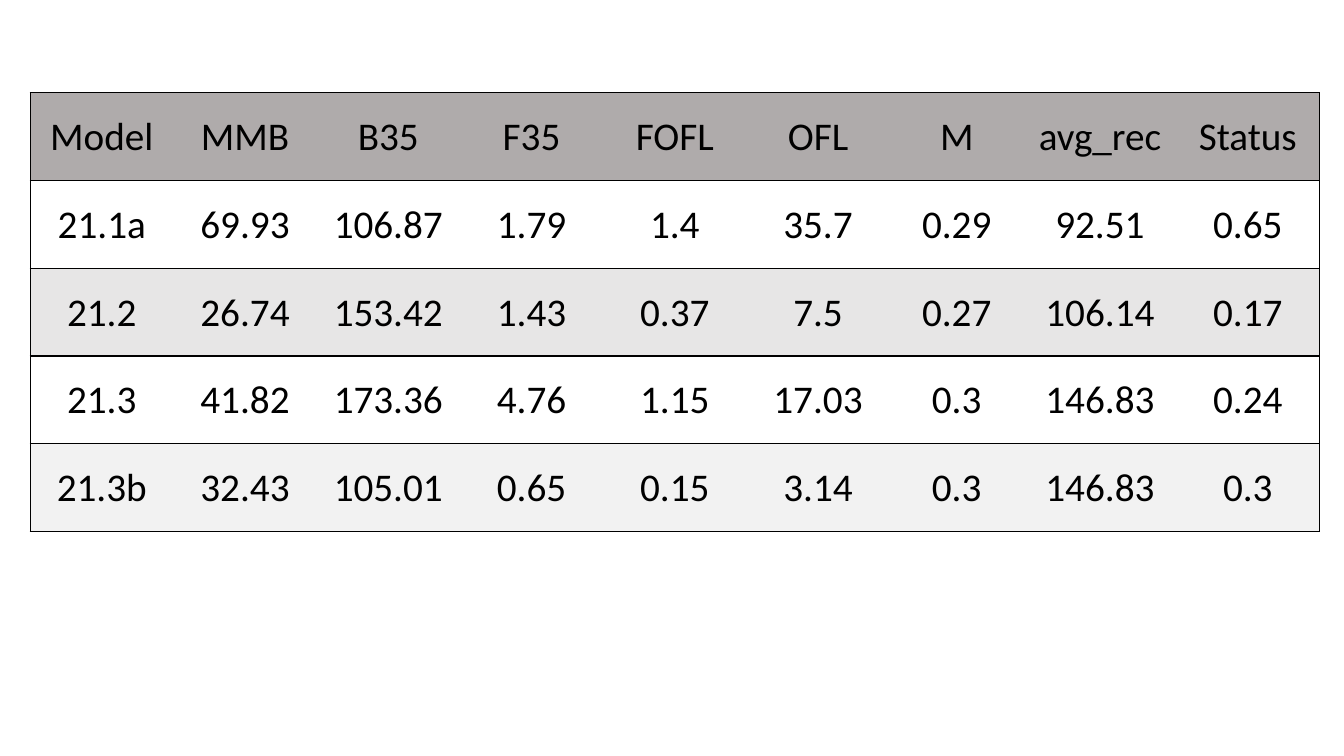
from typing import NamedTuple

from lxml import etree
from pptx import Presentation
from pptx import util as u
from pptx.dml import color
from pptx.enum import text
from pptx.oxml import ns


class Row(NamedTuple):
    fill: str
    values: tuple[str, ...]


ROWS = (
    Row("AFABAB", ("Model", "MMB", "B35", "F35", "FOFL", "OFL", "M", "avg_rec", "Status")),
    Row("FFFFFF", ("21.1a", "69.93", "106.87", "1.79", "1.4", "35.7", "0.29", "92.51", "0.65")),
    Row("E7E6E6", ("21.2", "26.74", "153.42", "1.43", "0.37", "7.5", "0.27", "106.14", "0.17")),
    Row("FFFFFF", ("21.3", "41.82", "173.36", "4.76", "1.15", "17.03", "0.3", "146.83", "0.24")),
    Row("F2F2F2", ("21.3b", "32.43", "105.01", "0.65", "0.15", "3.14", "0.3", "146.83", "0.3")),
)
COLUMN_WIDTH = 3.61
SPECIAL_WIDTHS = {"M": 3.38, "avg_rec": 3.84}
ROW_HEIGHT = 2.21
INK = "000000"


def rgb(value: str) -> color.RGBColor:
    return color.RGBColor.from_string(value)


def set_borders(cell, ruled: str) -> None:
    """Rule the sides named by L, R, T and B in black and clear the others."""
    properties = cell._tc.get_or_add_tcPr()
    for side in "LRTB":
        line = etree.SubElement(properties, ns.qn(f"a:ln{side}"), w=str(u.Pt(1)))
        if side in ruled:
            fill = etree.SubElement(line, ns.qn("a:solidFill"))
            etree.SubElement(fill, ns.qn("a:srgbClr"), val=INK)
        else:
            etree.SubElement(line, ns.qn("a:noFill"))


def fill_cell(cell, value: str, fill: str, ruled: str) -> None:
    set_borders(cell, ruled)
    cell.fill.solid()
    cell.fill.fore_color.rgb = rgb(fill)
    cell.vertical_anchor = text.MSO_ANCHOR.MIDDLE
    cell.margin_left = cell.margin_right = cell.margin_top = u.Cm(0.03)
    cell.margin_bottom = 0
    cell.text = value
    paragraph = cell.text_frame.paragraphs[0]
    paragraph.alignment = text.PP_ALIGN.CENTER
    paragraph.font.name = "Calibri"
    paragraph.font.size = u.Pt(28)
    paragraph.font.bold = False
    paragraph.font.color.rgb = rgb(INK)


def add_model_table(slide) -> None:
    headings = ROWS[0].values
    widths = [SPECIAL_WIDTHS.get(heading, COLUMN_WIDTH) for heading in headings]
    models = slide.shapes.add_table(
        len(ROWS), len(headings), u.Cm(0.76), u.Cm(2.34),
        u.Cm(sum(widths)), u.Cm(ROW_HEIGHT * len(ROWS)),
    ).table
    models.first_row = models.horz_banding = False
    for column, width in zip(models.columns, widths):
        column.width = u.Cm(width)
    outer_sides = {0: "L", len(headings) - 1: "R"}
    for r, row in enumerate(ROWS):
        models.rows[r].height = u.Cm(ROW_HEIGHT)
        for c, value in enumerate(row.values):
            fill_cell(models.cell(r, c), value, row.fill, "TB" + outer_sides.get(c, ""))


def main() -> None:
    deck = Presentation()
    deck.slide_width, deck.slide_height = u.Cm(33.87), u.Cm(19.05)
    add_model_table(deck.slides.add_slide(deck.slide_layouts[6]))
    deck.save("out.pptx")


if __name__ == "__main__":
    main()
